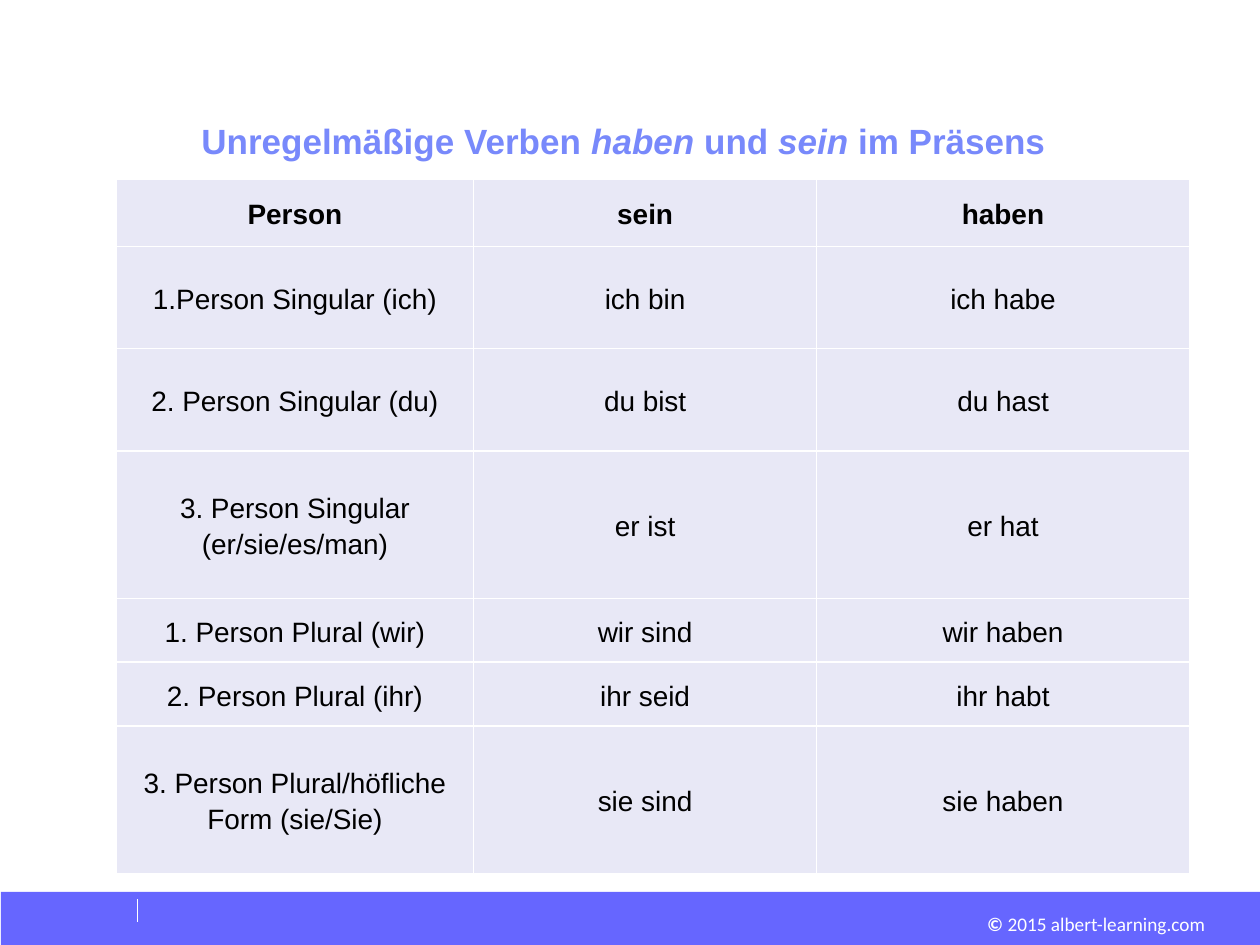
from lxml import etree
from pptx import Presentation, util as u
from pptx.dml.color import RGBColor
from pptx.enum import shapes, text
from pptx.oxml import ns


def colour(value):
    return RGBColor.from_string(value)


class Page:
    heading_font = "Arial"
    footer_font = "Calibri"
    white = "FFFFFF"
    black = "000000"
    bar_blue = "6666FF"
    title_blue = "7889FB"
    cell_lilac = "E8E8F6"

    def __init__(self, slide):
        self.slide = slide

    def style(self, run, font, size, value, bold=False, italic=False):
        run.font.name = font
        run.font.size = u.Pt(size)
        run.font.color.rgb = colour(value)
        run.font.bold = bold
        run.font.italic = italic

    def bar(self, left, top, width, height):
        band = self.slide.shapes.add_shape(
            shapes.MSO_SHAPE.RECTANGLE, u.Cm(left), u.Cm(top), u.Cm(width), u.Cm(height))
        band.shadow.inherit = False
        band.fill.solid()
        band.fill.fore_color.rgb = colour(self.bar_blue)
        band.line.fill.background()

    def divider(self, x, top, bottom):
        rule = self.slide.shapes.add_connector(
            shapes.MSO_CONNECTOR.STRAIGHT, u.Cm(x), u.Cm(top), u.Cm(x), u.Cm(bottom))
        rule.line.color.rgb = colour(self.white)
        rule.line.width = u.Pt(0.75)
        etree.SubElement(rule._element.spPr, ns.qn("a:effectLst"))

    def textbox(self, left, top, width, height):
        frame = self.slide.shapes.add_textbox(
            u.Cm(left), u.Cm(top), u.Cm(width), u.Cm(height)).text_frame
        frame.vertical_anchor = text.MSO_ANCHOR.MIDDLE
        return frame

    def title(self, left, top, width, height, pieces):
        frame = self.textbox(left, top, width, height)
        frame.word_wrap = True
        heading = frame.paragraphs[0]
        heading.line_spacing = 0.9
        margins = heading._p.get_or_add_pPr()
        margins.set("marL", str(u.Cm(5.72)))
        margins.set("indent", str(u.Cm(-0.64)))
        for words, italic in pieces:
            run = heading.add_run()
            run.text = words
            self.style(run, self.heading_font, 20, self.title_blue, True, italic)

    def footer(self, left, top, width, height, pieces):
        frame = self.textbox(left, top, width, height)
        frame.word_wrap = False
        frame.margin_left = frame.margin_right = 0
        frame.margin_top = frame.margin_bottom = 0
        notice = frame.paragraphs[0]
        notice.alignment = text.PP_ALIGN.RIGHT
        for words, bold in pieces:
            run = notice.add_run()
            run.text = words
            self.style(run, self.footer_font, 11, self.white, bold)

    def borders(self, cell):
        properties = cell._tc.get_or_add_tcPr()
        for side in ("lnL", "lnR", "lnT", "lnB"):
            edge = etree.SubElement(properties, ns.qn(f"a:{side}"), w=str(u.Pt(1)))
            fill = etree.SubElement(edge, ns.qn("a:solidFill"))
            etree.SubElement(fill, ns.qn("a:srgbClr"), val=self.white)

    def cell(self, cell, words, header):
        self.borders(cell)
        cell.fill.solid()
        cell.fill.fore_color.rgb = colour(self.cell_lilac)
        cell.vertical_anchor = text.MSO_ANCHOR.MIDDLE
        cell.margin_left = cell.margin_right = u.Cm(0.2)
        cell.margin_top = cell.margin_bottom = u.Cm(0.08 if header else 0.1)
        cell.text_frame.text = words
        entry = cell.text_frame.paragraphs[0]
        entry.alignment = text.PP_ALIGN.CENTER
        entry.line_spacing = 1.15
        entry.space_after = u.Pt(10)
        self.style(entry.runs[0], self.heading_font, 16, self.black, header)

    def table(self, left, top, widths, heights, rows):
        grid = self.slide.shapes.add_table(
            len(rows), len(widths), u.Cm(left), u.Cm(top),
            u.Cm(sum(widths)), u.Cm(sum(heights))).table
        grid.first_row = grid.horz_banding = False
        for column, width in zip(grid.columns, widths):
            column.width = u.Cm(width)
        for index, (height, row) in enumerate(zip(heights, rows)):
            grid.rows[index].height = u.Cm(height)
            for position, words in enumerate(row):
                self.cell(grid.cell(index, position), words, index == 0)


def main():
    deck = Presentation()
    deck.slide_width, deck.slide_height = u.Cm(25.4), u.Cm(19.05)
    page = Page(deck.slides.add_slide(deck.slide_layouts[6]))

    page.bar(0.02, 17.98, 25.38, 1.07)
    page.divider(2.77, 18.13, 18.59)
    page.footer(19.78, 18.39, 4.52, 0.48,
                [("© ", True), ("2015 albert-learning.com", False)])
    page.title(-1.27, 2.38, 25.55, 1, [
        ("Unregelmäßige Verben ", False), ("haben", True), (" und ", False),
        ("sein", True), (" im Präsens", False)])

    conjugation = [
        ("Person", "sein", "haben"),
        ("1.Person Singular (ich)", "ich bin", "ich habe"),
        ("2. Person Singular (du)", "du bist", "du hast"),
        ("3. Person Singular (er/sie/es/man)", "er ist", "er hat"),
        ("1. Person Plural (wir)", "wir sind", "wir haben"),
        ("2. Person Plural (ihr)", "ihr seid", "ihr habt"),
        ("3. Person Plural/höfliche Form (sie/Sie)", "sie sind", "sie haben"),
    ]
    page.table(2.34, 3.61, [7.21, 6.91, 7.52],
               [1.36, 2.06, 2.06, 2.97, 1.29, 1.29, 2.97], conjugation)
    deck.save("out.pptx")


if __name__ == "__main__":
    main()
